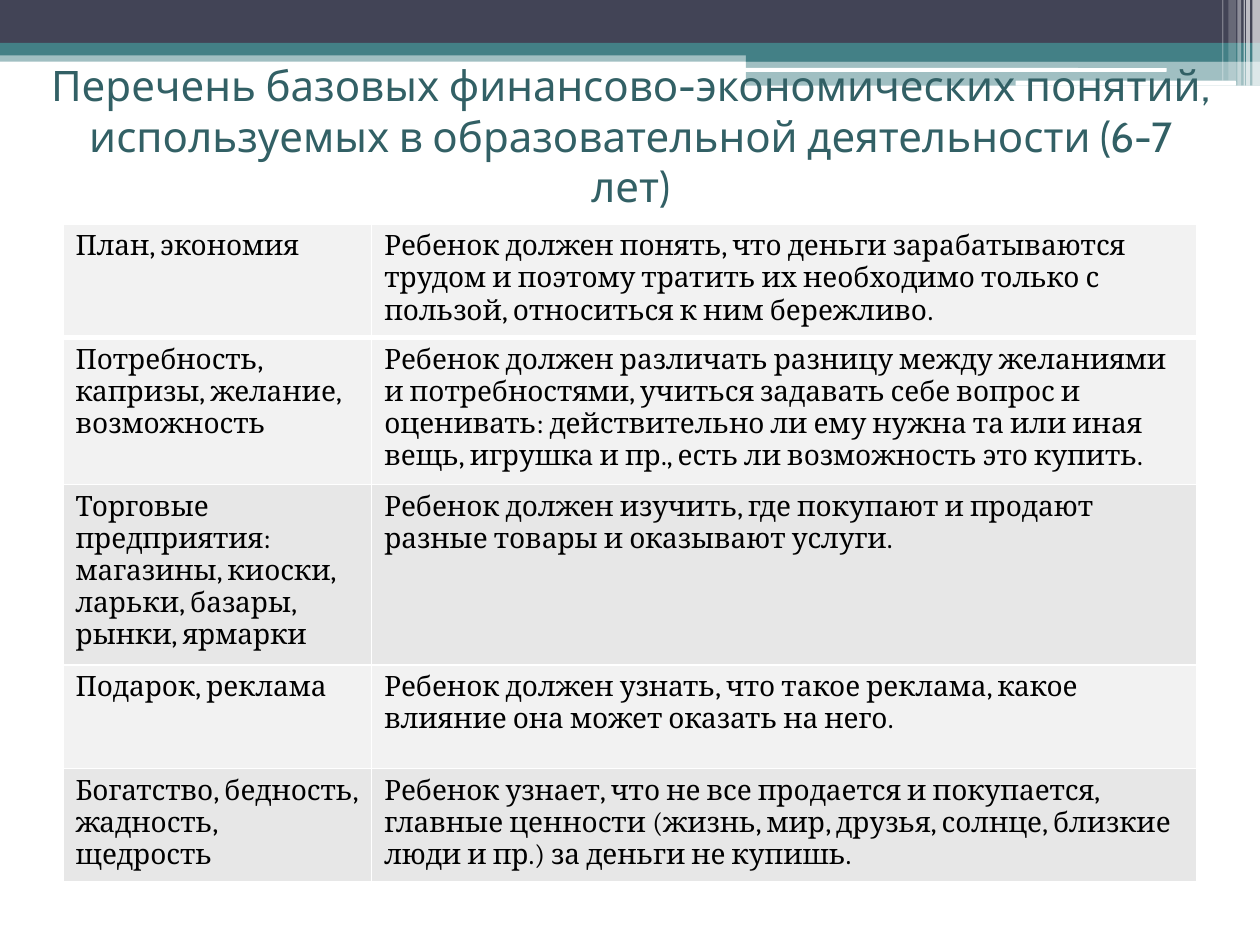
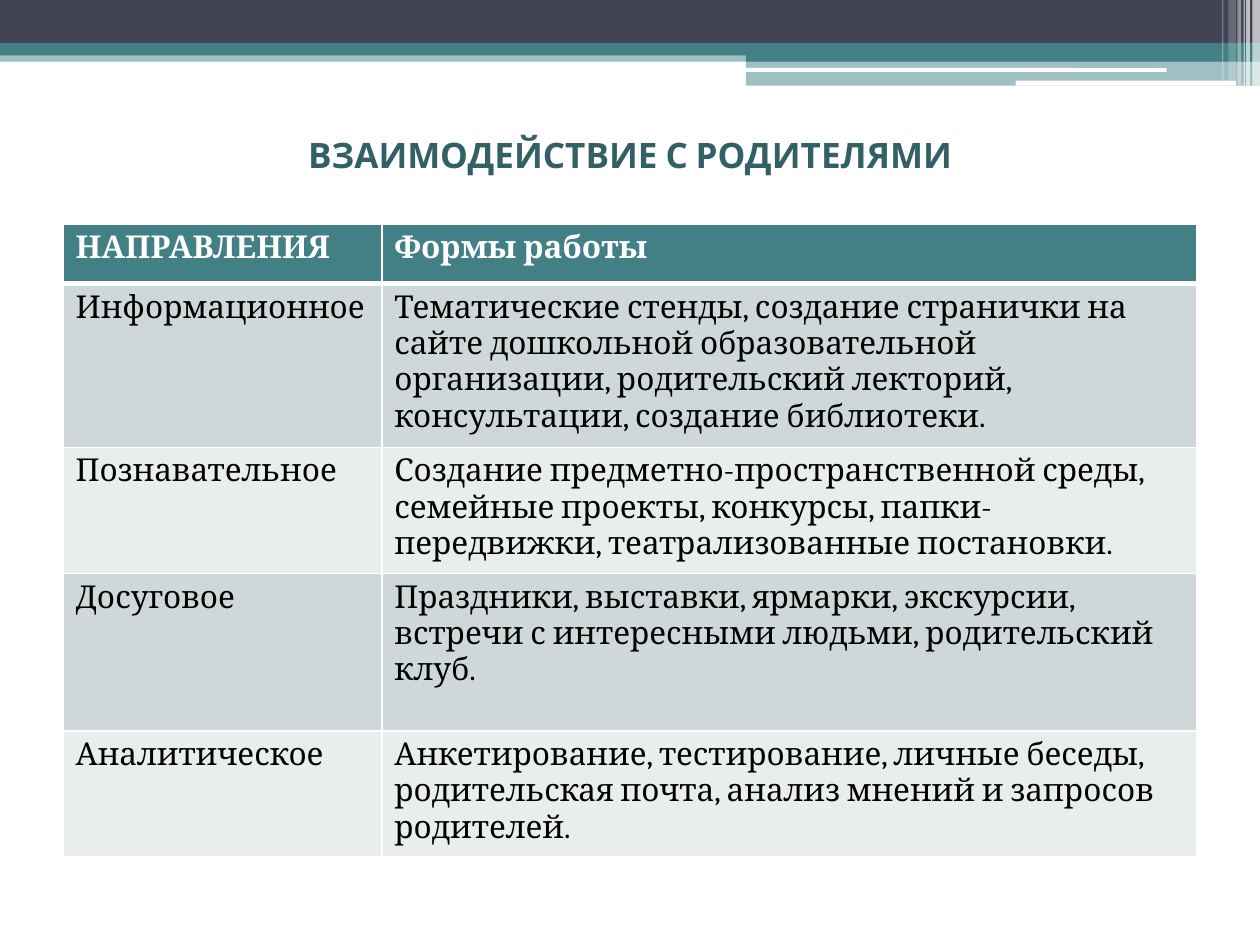
"""Build two slides with tables on financial literacy for preschool children."""
import lxml.etree
import pptx
import pptx.dml.color
import pptx.enum.shapes
import pptx.enum.text
import pptx.oxml.ns
import pptx.util

Inches = pptx.util.Inches
qn = pptx.oxml.ns.qn

COLORS = {
    "navy": "424456", "teal": "438086", "white": "FFFFFF", "black": "000000",
    "title": "326065", "light": "F2F2F2", "gray": "E7E7E7",
    "mist": "CFD8D9", "pale": "E9EDED",
}
RECTANGLE = pptx.enum.shapes.MSO_SHAPE.RECTANGLE
ROUNDED = pptx.enum.shapes.MSO_SHAPE.ROUNDED_RECTANGLE

# left, top, width, height, shape, colour, opacity in percent
BANDS = [
    (0, 0.4, 10, 0.09, RECTANGLE, "teal", 50),
    (0, 0, 10, 0.34, RECTANGLE, "navy", 100),
    (0, 0.34, 10, 0.1, RECTANGLE, "teal", 100),
    (5.92, 0.39, 4.08, 0.1, RECTANGLE, "teal", 100),
    (5.92, 0.48, 4.08, 0.2, RECTANGLE, "teal", 50),
    (5.91, 0.54, 3.35, 0.03, ROUNDED, "white", 100),
    (8.06, 0.64, 1.75, 0.04, ROUNDED, "white", 100),
]
STRIPES = [
    (9.94, 0.06, 0.68, 65), (9.89, 0.03, 0.68, 65), (9.87, 0.01, 0.68, 60),
    (9.82, 0.03, 0.68, 40), (9.75, 0.06, 0.64, 20), (9.7, 0.01, 0.64, 30),
]
BANDS += [(left, 0, width, height, RECTANGLE, "white", opacity)
          for left, width, height, opacity in STRIPES]

SLIDES = [
    {
        "title": "Перечень базовых финансово-экономических понятий, "
                 "используемых в образовательной деятельности (6-7 лет)",
        "title_box": (0.28, 0.68, 9.45, 0.79), "title_size": 24, "title_bold": False,
        "text_size": 16, "has_header": False, "columns": (2.45, 6.55),
        "heights": (0.86, 1.12, 1.38, 0.82, 0.86),
        "fills": ("light", "light", "gray", "light", "gray"),
        "rows": [
            ("План, экономия",
             "Ребенок должен понять, что деньги зарабатываются трудом и поэтому "
             "тратить их необходимо только с пользой, относиться к ним бережливо."),
            ("Потребность, капризы, желание, возможность",
             "Ребенок должен различать разницу между желаниями и потребностями, "
             "учиться задавать себе вопрос и оценивать: действительно ли ему нужна "
             "та или иная вещь, игрушка и пр., есть ли возможность это купить."),
            ("Торговые предприятия: магазины, киоски, ларьки, базары, рынки, ярмарки",
             "Ребенок должен изучить, где покупают и продают разные товары "
             "и оказывают услуги."),
            ("Подарок, реклама",
             "Ребенок должен узнать, что такое реклама, какое влияние она может "
             "оказать на него."),
            ("Богатство, бедность, жадность, щедрость",
             "Ребенок узнает, что не все продается и покупается, главные ценности "
             "(жизнь, мир, друзья, солнце, близкие люди и пр.) за деньги не купишь."),
        ],
    },
    {
        "title": "ВЗАИМОДЕЙСТВИЕ С РОДИТЕЛЯМИ",
        "title_box": (0.5, 0.76, 9, 0.94), "title_size": 20, "title_bold": True,
        "text_size": 18, "has_header": True, "columns": (2.53, 6.47),
        "heights": (0.47, 1.25, 0.98, 1.25, 0.98),
        "fills": ("teal", "mist", "pale", "mist", "pale"),
        "rows": [
            ("НАПРАВЛЕНИЯ", "Формы работы"),
            ("Информационное",
             "Тематические стенды, создание странички на сайте дошкольной "
             "образовательной организации, родительский лекторий, консультации, "
             "создание библиотеки."),
            ("Познавательное",
             "Создание предметно-пространственной среды,\n"
             "семейные проекты, конкурсы, папки-передвижки, театрализованные "
             "постановки."),
            ("Досуговое",
             "Праздники, выставки, ярмарки, экскурсии, встречи с интересными "
             "людьми, родительский клуб."),
            ("Аналитическое",
             "Анкетирование, тестирование, личные беседы, родительская почта, "
             "анализ мнений и запросов родителей."),
        ],
    },
]


def rgb(name):
    return pptx.dml.color.RGBColor.from_string(COLORS[name])


def write(frame, text, font="Cambria", size=16, color="black", bold=False, align=None):
    frame.word_wrap = True
    for index, line in enumerate(text.split("\n")):
        para = frame.add_paragraph() if index else frame.paragraphs[0]
        para.alignment = align
        span = para.add_run()
        span.text = line
        span.font.name = font
        span.font.size = pptx.util.Pt(size)
        span.font.bold = bold
        span.font.color.rgb = rgb(color)


deck = pptx.Presentation()
deck.slide_width = Inches(10)
deck.slide_height = Inches(7.5)

for content in SLIDES:
    page = deck.slides.add_slide(deck.slide_layouts[6])

    for left, top, width, height, kind, color, opacity in BANDS:
        band = page.shapes.add_shape(
            kind, Inches(left), Inches(top), Inches(width), Inches(height))
        band.shadow.inherit = False
        band.line.fill.background()
        band.fill.solid()
        band.fill.fore_color.rgb = rgb(color)
        if opacity < 100:
            tint = band.fill._xPr.find(qn("a:solidFill"))[0]
            lxml.etree.SubElement(tint, qn("a:alpha"), val=str(opacity * 1000))

    title = page.shapes.add_textbox(*map(Inches, content["title_box"]))
    title.text_frame.vertical_anchor = pptx.enum.text.MSO_ANCHOR.MIDDLE
    write(title.text_frame, content["title"], font="Cabin", size=content["title_size"],
          color="title", bold=content["title_bold"],
          align=pptx.enum.text.PP_ALIGN.CENTER)

    table = page.shapes.add_table(
        len(content["rows"]), 2, Inches(0.5), Inches(1.78), Inches(9),
        Inches(sum(content["heights"]))).table
    table.first_row = content["has_header"]
    for column, width in zip(table.columns, content["columns"]):
        column.width = Inches(width)

    for row_index, texts in enumerate(content["rows"]):
        table.rows[row_index].height = Inches(content["heights"][row_index])
        is_header = content["has_header"] and row_index == 0
        for column_index, text in enumerate(texts):
            cell = table.cell(row_index, column_index)
            write(cell.text_frame, text, size=content["text_size"], bold=is_header,
                  color="white" if is_header else "black")
            properties = cell._tc.get_or_add_tcPr()
            for side in "LRTB":
                thick = (row_index, side) in ((0, "B"), (1, "T"))
                border = lxml.etree.SubElement(
                    properties, qn(f"a:ln{side}"), w=str(pptx.util.Pt(3 if thick else 1)))
                paint = lxml.etree.SubElement(border, qn("a:solidFill"))
                lxml.etree.SubElement(paint, qn("a:srgbClr"), val=COLORS["white"])
            cell.fill.solid()
            cell.fill.fore_color.rgb = rgb(content["fills"][row_index])

deck.save("out.pptx")
